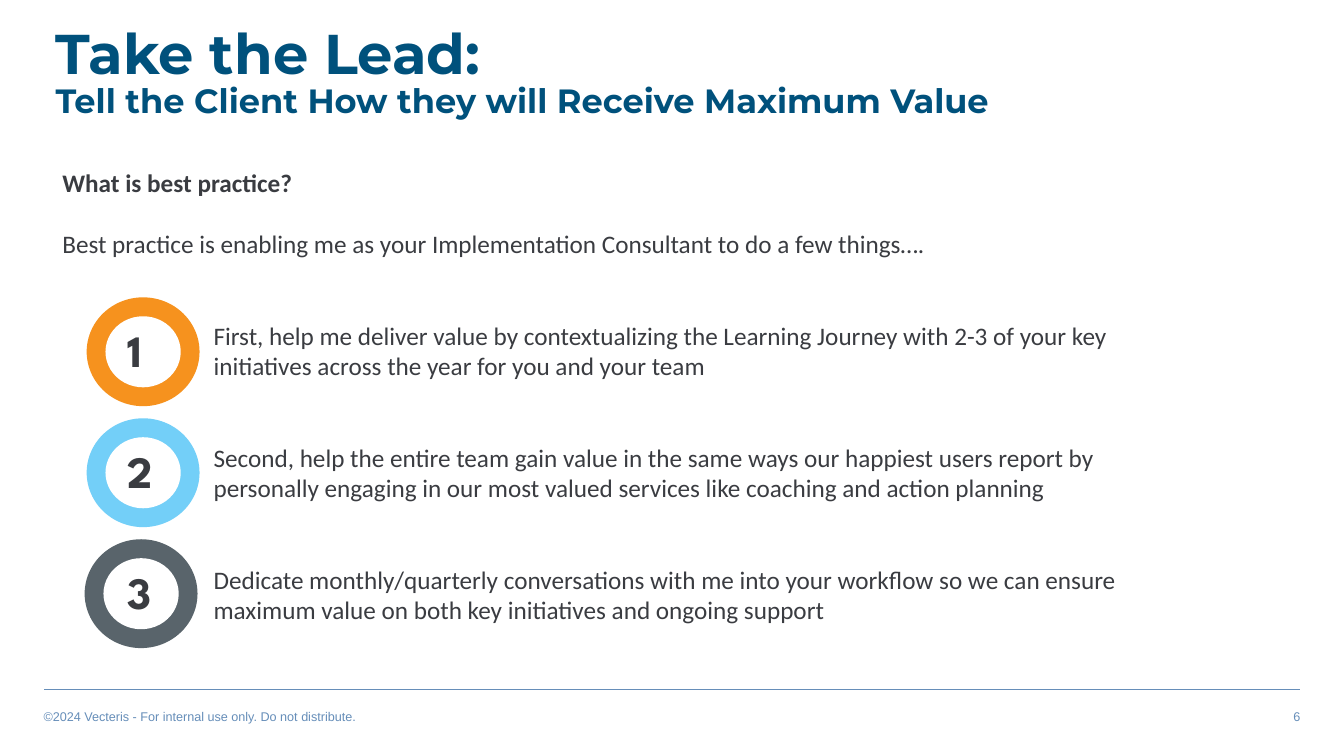
from typing import NamedTuple

from lxml.etree import SubElement
from pptx import Presentation
from pptx.dml.color import RGBColor
from pptx.enum.shapes import MSO_CONNECTOR, MSO_SHAPE
from pptx.enum.text import MSO_ANCHOR, PP_ALIGN
from pptx.oxml.ns import qn
from pptx.util import Inches, Pt

NAVY = RGBColor(0x00, 0x51, 0x7C)
INK = RGBColor(0x3A, 0x3C, 0x41)
STEEL = RGBColor(0x66, 0x8E, 0xB9)
ORANGE = RGBColor(0xF6, 0x92, 0x1E)
SKY = RGBColor(0x73, 0xCF, 0xF8)
SLATE = RGBColor(0x59, 0x64, 0x6B)
WHITE = RGBColor(0xFF, 0xFF, 0xFF)

WIDTH, HEIGHT = Inches(13.33), Inches(7.5)
GAP = 22  # one line of body text, in points
PITCH = 16  # rows from one step to the next


class Box(NamedTuple):
    """A place on a grid of 100 columns by 100 rows."""
    left: float
    top: float
    wide: float
    high: float


class Style(NamedTuple):
    face: str
    size: int
    color: RGBColor
    bold: bool = False


class Step(NamedTuple):
    left: float
    color: RGBColor
    text: str


HEAD = Style("Montserrat", 40, NAVY, True)
SUB = Style("Montserrat", 24, NAVY, True)
BODY = Style("Calibri", 18, INK)
STRONG = Style("Calibri", 18, INK, True)
FOOT = Style("Arial", 9, STEEL)
DIGIT = Style("League Spartan", 32, INK, True)

STEPS = [
    Step(6.45, ORANGE, "First, help me deliver value by contextualizing the Learning "
         "Journey with 2-3 of your key initiatives across the year for you and your team"),
    Step(6.45, SKY, "Second, help the entire team gain value in the same ways our happiest "
         "users report by personally engaging in our most valued services like coaching "
         "and action planning"),
    Step(6.3, SLATE, "Dedicate monthly/quarterly conversations with me into your workflow so "
         "we can ensure maximum value on both key initiatives and ongoing support"),
]


def col(n: float) -> int:
    return round(WIDTH * n / 100)


def row(n: float) -> int:
    return round(HEIGHT * n / 100)


def place(box: Box) -> tuple[int, int, int, int]:
    return col(box.left), row(box.top), col(box.wide), row(box.high)


def paint(font, style: Style) -> None:
    font.name, font.size, font.bold = style.face, Pt(style.size), style.bold
    font.color.rgb = style.color


def add_text(slide, box: Box, text: str, style: Style):
    """Add a wrapped text box and return its text frame."""
    frame = slide.shapes.add_textbox(*place(box)).text_frame
    frame.word_wrap = True
    frame.text = text
    paint(frame.paragraphs[0].runs[0].font, style)
    return frame


def add_para(frame, text: str, lines: int, inset: float = 0) -> None:
    """Add a body paragraph a number of lines below the last one."""
    para = frame.add_paragraph()
    para.text = text
    para.space_before = Pt(GAP * lines)
    if inset:
        props = para._p.get_or_add_pPr()
        props.set("marL", str(Inches(inset)))
        props.set("indent", "0")
    paint(para.runs[0].font, BODY)


def add_disc(slide, box: Box, color: RGBColor) -> None:
    disc = slide.shapes.add_shape(MSO_SHAPE.OVAL, *place(box))
    disc.shadow.inherit = False
    disc.fill.solid()
    disc.fill.fore_color.rgb = color
    disc.line.fill.background()


def add_footer(slide) -> None:
    rule = slide.shapes.add_connector(
        MSO_CONNECTOR.STRAIGHT, col(3.3), row(91.2), col(96.7), row(91.2))
    rule.line.color.rgb = STEEL
    rule.line.width = Pt(1)
    SubElement(rule._element.spPr, qn("a:effectLst"))
    add_text(slide, Box(2.5, 93.07, 40, 3.33),
             "©2024 Vecteris - For internal use only. Do not distribute.", FOOT)
    page = add_text(slide, Box(57.5, 93.07, 40, 3.33), "6", FOOT)
    page.paragraphs[0].alignment = PP_ALIGN.RIGHT


def add_title(slide) -> None:
    frame = add_text(slide, Box(3.4, 6.5, 82, 10.1), "Take the Lead:", HEAD)
    frame.vertical_anchor = MSO_ANCHOR.BOTTOM
    para = frame.paragraphs[0]
    para.line_spacing = 0.85
    para.add_line_break()
    run = para.add_run()
    run.text = "Tell the Client How they will Receive Maximum Value"
    paint(run.font, SUB)


def add_body(slide) -> None:
    frame = add_text(slide, Box(3.9, 21.47, 80.8, 62), "What is best practice?", STRONG)
    add_para(frame, "Best practice is enabling me as your Implementation Consultant "
             "to do a few things….", 1)
    for step in STEPS:
        add_para(frame, step.text, 2, 1.5)


def add_rings(slide) -> None:
    for i, step in enumerate(STEPS):
        top = 39.33 + i * PITCH
        add_disc(slide, Box(step.left, top, 8.4, 14.4), step.color)
        add_disc(slide, Box(step.left + 1.4, top + 2.5, 5.6, 9.4), WHITE)
        add_text(slide, Box(8.75, top + 2.7, 3.5, 8.5), str(i + 1), DIGIT)


def main() -> None:
    deck = Presentation()
    deck.slide_width, deck.slide_height = WIDTH, HEIGHT
    slide = deck.slides.add_slide(deck.slide_layouts[6])
    add_footer(slide)
    add_title(slide)
    add_body(slide)
    add_rings(slide)
    deck.save("out.pptx")


if __name__ == "__main__":
    main()
